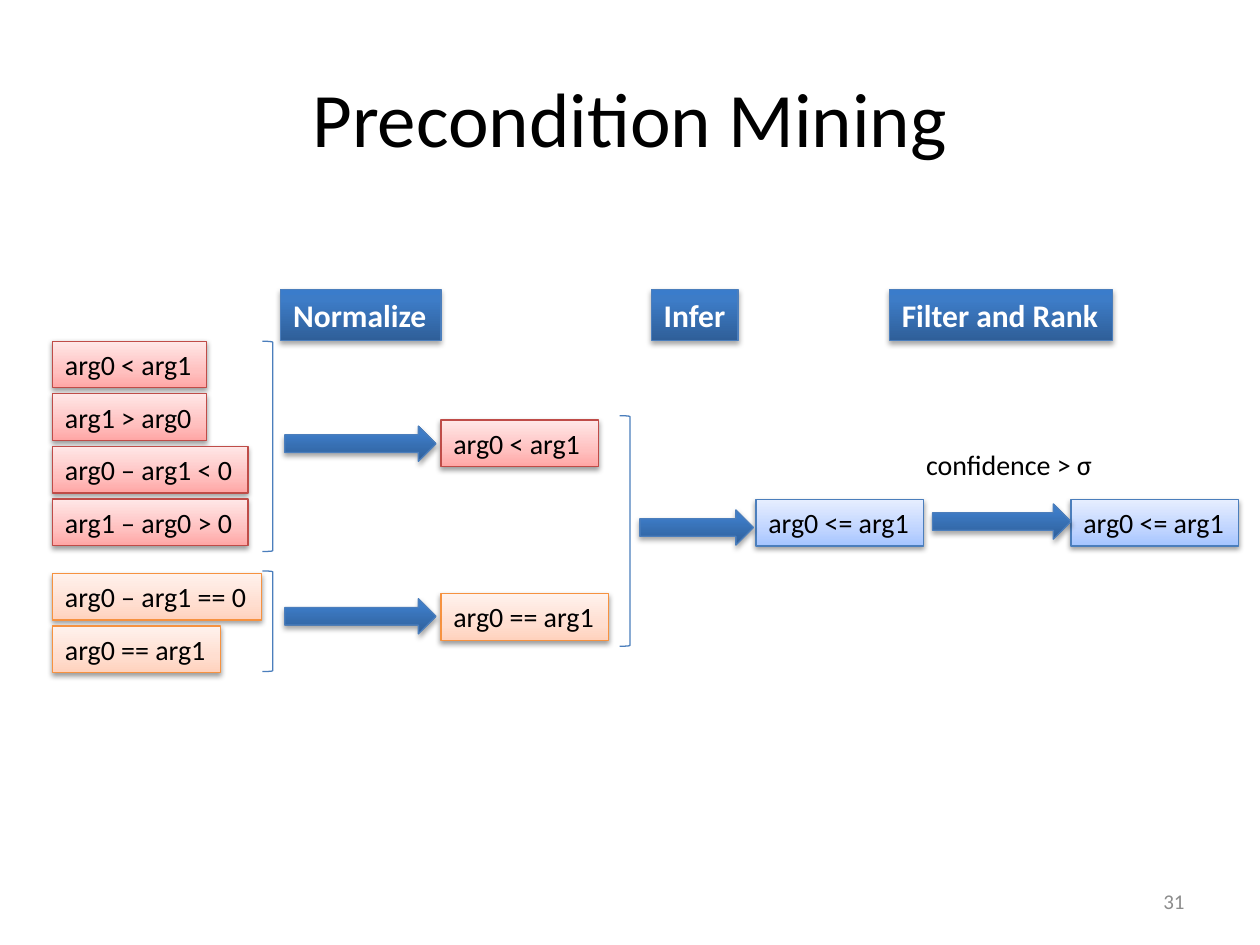
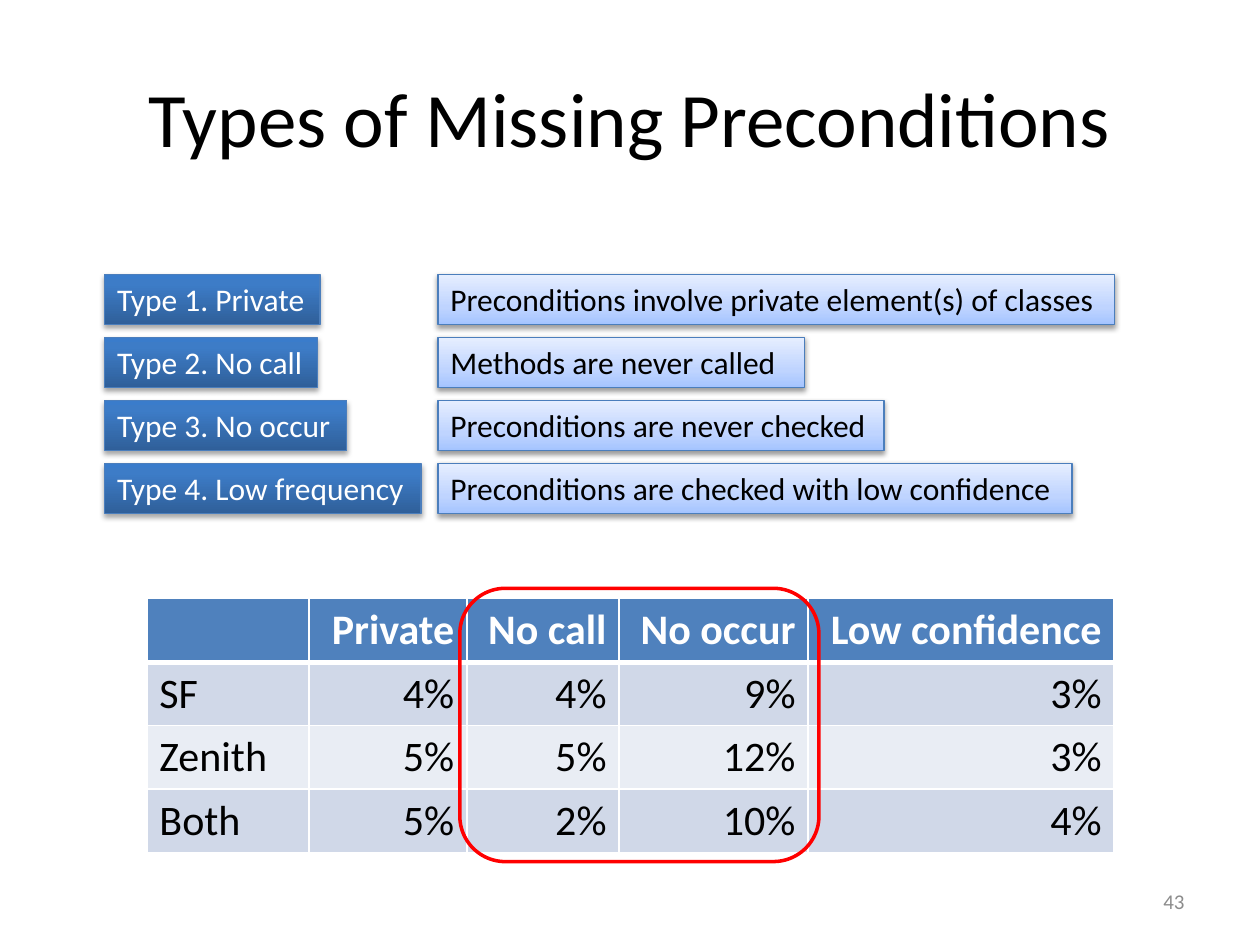
from collections import namedtuple

from lxml import etree
from pptx import Presentation
from pptx.dml.color import RGBColor
from pptx.enum.shapes import MSO_SHAPE as SHAPE
from pptx.enum.text import MSO_ANCHOR as ANCHOR, MSO_AUTO_SIZE as AUTO, PP_ALIGN as ALIGN
from pptx.oxml.ns import qn
from pptx.util import Cm, Pt

FONT = "Calibri"
BLACK = RGBColor(0x00, 0x00, 0x00)
WHITE = RGBColor(0xFF, 0xFF, 0xFF)
GREY = RGBColor(0x8C, 0x8C, 0x8C)
RED = RGBColor(0xFF, 0x00, 0x00)
BLUE_LINE = RGBColor(0x4B, 0x7E, 0xBC)
RED_LINE = RGBColor(0xBF, 0x4C, 0x48)
ORANGE_LINE = RGBColor(0xF6, 0x92, 0x40)
HEADER_FILL = RGBColor(0x4F, 0x81, 0xBD)
BAND_FILLS = (RGBColor(0xE9, 0xED, 0xF4), RGBColor(0xD0, 0xD8, 0xE8))

# Gradient stops run from bottom to top; shadow is (opacity %, distance pt)
Style = namedtuple("Style", "stops line text shadow")
DARK = Style(((0, "2F5F99"), (80, "3D7CC7"), (100, "3A7CCB")), BLUE_LINE, WHITE, (35, 1.8))
BLUE = Style(((0, "A4C4FF"), (35, "BFD4FF"), (100, "E6EEFF")), BLUE_LINE, BLACK, (38, 1.6))
PINK = Style(((0, "FFA6A5"), (35, "FFC0BF"), (100, "FFE7E7")), RED_LINE, BLACK, (38, 1.6))
PEACH = Style(((0, "FFD2BD"), (35, "FFDED0"), (100, "FFF2ED")), ORANGE_LINE, BLACK, (38, 1.6))

ROW_H = 0.94      # height of a 16 pt box
LABEL_H = 1.02    # height of an 18 pt box
ROW_PITCH = 1.06
TYPE_PITCH = 1.27


def sub(parent, tag, **attrs):
    return etree.SubElement(parent, qn(tag), {k: str(v) for k, v in attrs.items()})


def set_text(p, text, size, color, align=ALIGN.LEFT, bold=False):
    p.text = text
    p.alignment = align
    p.font.name, p.font.size, p.font.bold = FONT, Pt(size), bold
    p.font.color.rgb = color


# ---- Shared slide parts ----
def add_slide(prs, title, number):
    slide = prs.slides.add_slide(prs.slide_layouts[5])
    sp = slide.shapes.title
    sp.left, sp.top, sp.width, sp.height = Cm(1.27), Cm(0.76), Cm(22.86), Cm(3.18)
    sp.text_frame.vertical_anchor = ANCHOR.MIDDLE
    set_text(sp.text_frame.paragraphs[0], title, 44, BLACK, ALIGN.CENTER)
    add_text(slide, 18.2, 17.65, 5.93, 1.02, number, 12, GREY, ALIGN.RIGHT, ANCHOR.MIDDLE)
    return slide


def add_text(slide, x, y, w, h, text, size, color, align=ALIGN.LEFT, anchor=ANCHOR.TOP):
    tf = slide.shapes.add_textbox(Cm(x), Cm(y), Cm(w), Cm(h)).text_frame
    tf.word_wrap = False
    tf.vertical_anchor = anchor
    set_text(tf.paragraphs[0], text, size, color, align)


# ---- Shapes ----
def add_outline(slide, kind, x, y, w, h, color, width=0.75):
    sp = slide.shapes.add_shape(kind, Cm(x), Cm(y), Cm(w), Cm(h))
    sp.shadow.inherit = False
    sp.fill.background()
    sp.line.color.rgb = color
    sp.line.width = Pt(width)
    return sp


def add_styled(slide, kind, x, y, w, h, style):
    sp = add_outline(slide, kind, x, y, w, h, style.line)
    sp.fill.gradient()
    sp.fill.gradient_angle = 90
    spPr = sp._element.spPr
    stops = spPr.find(".//" + qn("a:gsLst"))
    for stop in list(stops):
        stops.remove(stop)
    for pos, color in style.stops:
        sub(sub(stops, "a:gs", pos=pos * 1000), "a:srgbClr", val=color)
    opacity, dist = style.shadow
    shadow = sub(spPr.find(qn("a:effectLst")), "a:outerShdw", blurRad=Pt(3.1),
                 dist=Pt(dist), dir=5400000, rotWithShape=0)
    sub(sub(shadow, "a:srgbClr", val="000000"), "a:alpha", val=opacity * 1000)
    return sp


def add_box(slide, x, y, w, text, style, size=16, bold=False):
    h = LABEL_H if size == 18 else ROW_H
    tf = add_styled(slide, SHAPE.RECTANGLE, x, y, w, h, style).text_frame
    tf.word_wrap = False
    tf.auto_size = AUTO.SHAPE_TO_FIT_TEXT
    tf.vertical_anchor = ANCHOR.TOP
    set_text(tf.paragraphs[0], text, size, style.text, bold=bold)


def add_arrow(slide, x, y, w):
    add_styled(slide, SHAPE.RIGHT_ARROW, x, y, w, 0.71, DARK)


def add_bracket(slide, x, y, h):
    add_outline(slide, SHAPE.RIGHT_BRACKET, x, y, 0.21, h, BLUE_LINE)


# ---- Table ----
def set_borders(cell, top, bottom):
    tcPr = cell._tc.get_or_add_tcPr()
    widths = {"a:lnL": 1, "a:lnR": 1, "a:lnT": top, "a:lnB": bottom}
    for i, (tag, width) in enumerate(widths.items()):
        ln = sub(tcPr, tag, w=Pt(width))
        sub(sub(ln, "a:solidFill"), "a:srgbClr", val=WHITE)
        tcPr.insert(i, ln)


def add_table(slide, x, y, col_widths, row_h, rows):
    table = slide.shapes.add_table(len(rows), len(col_widths), Cm(x), Cm(y),
                                   Cm(sum(col_widths)), Cm(row_h * len(rows))).table
    for col, width in zip(table.columns, col_widths):
        col.width = Cm(width)
    for r, values in enumerate(rows):
        header = r == 0
        for c, value in enumerate(values):
            cell = table.cell(r, c)
            cell.fill.solid()
            cell.fill.fore_color.rgb = HEADER_FILL if header else BAND_FILLS[r % 2]
            set_borders(cell, 3 if r == 1 else 1, 3 if header else 1)
            set_text(cell.text_frame.paragraphs[0], value, 24, WHITE if header else BLACK,
                     ALIGN.RIGHT if c else ALIGN.LEFT, header)


# ---- Slides ----
def build_mining(prs):
    slide = add_slide(prs, "Precondition Mining", "31")

    # Stage headings
    for x, w, text in ((5.66, 3.23, "Normalize"), (13.13, 1.75, "Infer"),
                       (17.93, 4.5, "Filter and Rank")):
        add_box(slide, x, 5.84, w, text, DARK, 18, True)

    # Raw conditions, one stack per normalized form
    stacks = (
        (6.88, PINK, ((3.1, "arg0 < arg1"), (3.1, "arg1 > arg0"),
                      (3.94, "arg0 – arg1 < 0"), (3.94, "arg1 – arg0 > 0"))),
        (11.56, PEACH, ((4.22, "arg0 – arg1 == 0"), (3.38, "arg0 == arg1"))),
    )
    for top, style, items in stacks:
        for i, (w, text) in enumerate(items):
            add_box(slide, 1.06, top + i * ROW_PITCH, w, text, style)

    # Normalized and inferred conditions
    add_box(slide, 8.89, 8.47, 3.18, "arg0 < arg1", PINK)
    add_box(slide, 8.89, 11.97, 3.38, "arg0 == arg1", PEACH)
    for x in (15.24, 21.59):
        add_box(slide, x, 10.07, 3.38, "arg0 <= arg1", BLUE)
    add_text(slide, 18.42, 8.9, 3.94, ROW_H, "confidence > σ", 16, BLACK)

    # Brackets and arrows
    for x, y, h in ((5.29, 6.88, 4.24), (5.29, 11.51, 2.03), (12.49, 8.38, 4.65)):
        add_bracket(slide, x, y, h)
    for x, y, w in ((5.74, 8.59, 3.05), (5.74, 12.07, 3.05),
                    (12.9, 10.28, 2.29), (18.8, 10.16, 2.79)):
        add_arrow(slide, x, y, w)


def build_types(prs):
    slide = add_slide(prs, "Types of Missing Preconditions", "43")

    # Type labels with their meaning
    types = (
        (4.34, "Type 1. Private", 13.64, "Preconditions involve private element(s) of classes"),
        (4.29, "Type 2. No call", 7.39, "Methods are never called"),
        (4.88, "Type 3. No occur", 8.99, "Preconditions are never checked"),
        (6.38, "Type 4. Low frequency", 12.78, "Preconditions are checked with low confidence"),
    )
    for i, (label_w, label, meaning_w, meaning) in enumerate(types):
        y = 5.53 + i * TYPE_PITCH
        add_box(slide, 2.11, y, label_w, label, DARK, 18)
        add_box(slide, 8.83, y, meaning_w, meaning, BLUE, 18)

    # Share of each type, with the two middle columns marked
    add_table(slide, 2.96, 12.07, (3.27, 3.18, 3.07, 3.81, 6.17), 1.28, (
        ("", "Private", "No call", "No occur", "Low confidence"),
        ("SF", "4%", "4%", "9%", "3%"),
        ("Zenith", "5%", "5%", "12%", "3%"),
        ("Both", "5%", "2%", "10%", "4%"),
    ))
    add_outline(slide, SHAPE.ROUNDED_RECTANGLE, 9.27, 11.86, 7.24, 5.51, RED, 2)


def main():
    prs = Presentation()
    prs.slide_width, prs.slide_height = Cm(25.4), Cm(19.05)
    build_mining(prs)
    build_types(prs)
    prs.save("out.pptx")


if __name__ == "__main__":
    main()
